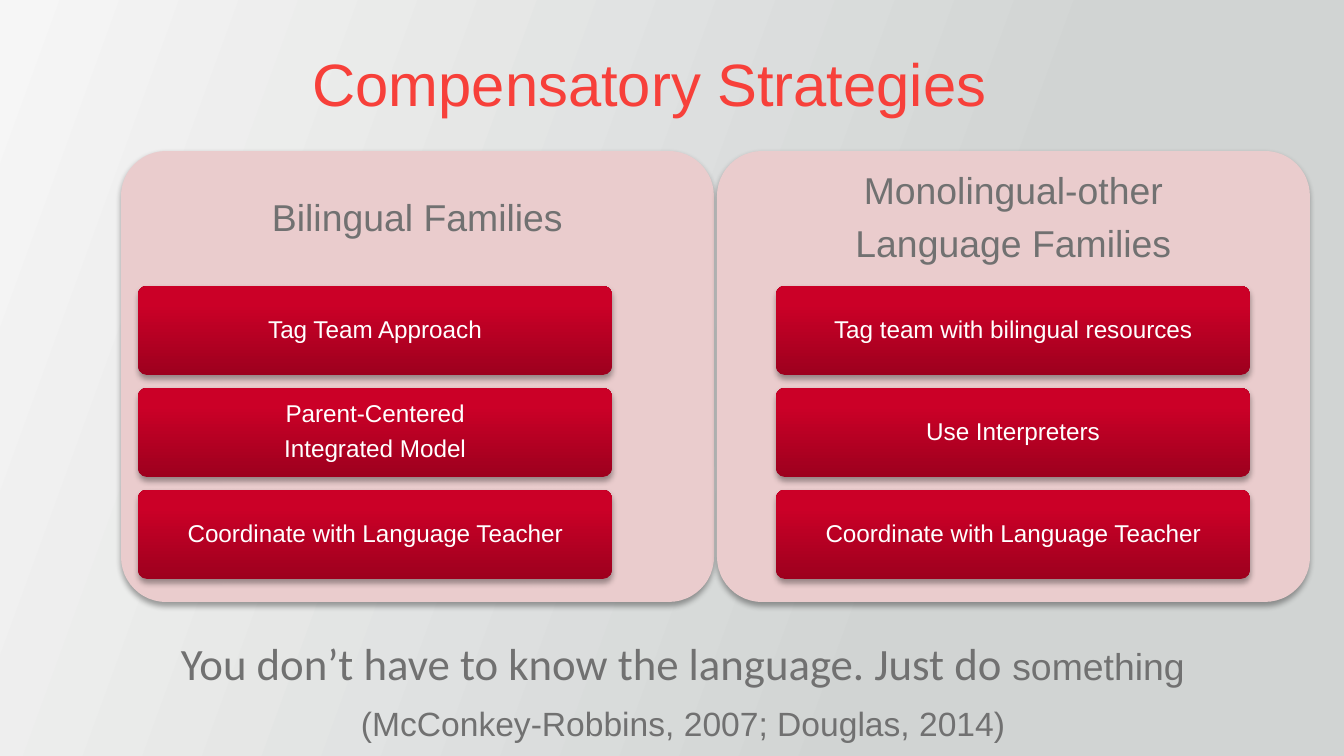
from lxml import etree
from pptx import Presentation
from pptx import util as u
from pptx.dml.color import RGBColor
from pptx.enum import shapes, text
from pptx.oxml.ns import qn

PX = 914400 / 134.4
GREY, RED, WHITE, PINK = "717171", "F7403A", "FFFFFF", "EACCCD"
BACKDROP = [(0, "F6F6F6"), (70, "D1D4D3")]
CRIMSON = [(0, "9D001E"), (80, "CB0027"), (100, "CC0028")]

CARD_TOP, CARD_W, CARD_H, HEADING_H = 151, 593, 451, 136
BUTTON_TOP, BUTTON_W, BUTTON_H, BUTTON_STEP = 286, 474, 89, 102

# Card left, button left, heading lines, strategies
FAMILIES = [
    (121, 138, ["Bilingual Families"],
     [["Tag Team Approach"],
      ["Parent-Centered", "Integrated Model"],
      ["Coordinate with Language Teacher"]]),
    (717, 776, ["Monolingual-other", "Language Families"],
     [["Tag team with bilingual resources"],
      ["Use Interpreters"],
      ["Coordinate with Language Teacher"]]),
]


def px(length):
    return u.Emu(round(length * PX))


def rgb(color):
    return RGBColor.from_string(color)


def add_xml(parent, tag, **attributes):
    return etree.SubElement(parent, qn(tag), {k: str(v) for k, v in attributes.items()})


def set_gradient(fill, owner, stops, angle):
    fill.gradient()
    gradient = owner.find(".//" + qn("a:gradFill"))
    for child in list(gradient):
        gradient.remove(child)
    stop_list = add_xml(gradient, "a:gsLst")
    for position, color in stops:
        stop = add_xml(stop_list, "a:gs", pos=position * 1000)
        add_xml(stop, "a:srgbClr", val=color)
    add_xml(gradient, "a:lin", ang=angle * 60000, scaled=0)


def add_shadow(shape):
    shape.shadow.inherit = False
    effects = shape._element.spPr.find(qn("a:effectLst"))
    shadow = add_xml(effects, "a:outerShdw", blurRad=u.Pt(3.1), dist=u.Pt(1.8),
                     dir=90 * 60000, rotWithShape=0)
    black = add_xml(shadow, "a:srgbClr", val="000000")
    add_xml(black, "a:alpha", val=35000)


def write(frame, lines, size=20, color=GREY, align=text.PP_ALIGN.CENTER,
          anchor=text.MSO_ANCHOR.MIDDLE, inset=(13, 7), wrap=True, stacked=False):
    """Each line is a list of (words, font, size) runs or a plain string."""
    frame.word_wrap = wrap
    frame.vertical_anchor = anchor
    frame.margin_left = frame.margin_right = px(inset[0])
    frame.margin_top = frame.margin_bottom = px(inset[1])
    for index, line in enumerate(lines):
        paragraph = frame.add_paragraph() if index else frame.paragraphs[0]
        paragraph.alignment = align
        if stacked:
            paragraph.line_spacing = 0.9
            after = add_xml(paragraph._p.get_or_add_pPr(), "a:spcAft")
            add_xml(after, "a:spcPct", val=35000)
        runs = [(line, "Arial", size)] if isinstance(line, str) else line
        for words, font, points in runs:
            run = paragraph.add_run()
            run.text = words
            run.font.name = font
            run.font.size = u.Pt(points)
            run.font.color.rgb = rgb(color)


def add_label(slide, x, y, w, h, lines, **style):
    label = slide.shapes.add_textbox(px(x), px(y), px(w), px(h))
    write(label.text_frame, lines, **style)
    return label


def add_panel(slide, x, y, w, h):
    panel = slide.shapes.add_shape(shapes.MSO_SHAPE.ROUNDED_RECTANGLE,
                                   px(x), px(y), px(w), px(h))
    panel.adjustments[0] = 0.1
    panel.line.fill.background()
    add_shadow(panel)
    return panel


def add_button(slide, x, y, lines):
    button = add_panel(slide, x, y, BUTTON_W, BUTTON_H)
    set_gradient(button.fill, button._element.spPr, CRIMSON, 270)
    write(button.text_frame, lines, size=13, color=WHITE, inset=(5, 4), stacked=True)


def add_family(slide, card_left, button_left, heading, strategies):
    card = add_panel(slide, card_left, CARD_TOP, CARD_W, CARD_H)
    card.fill.solid()
    card.fill.fore_color.rgb = rgb(PINK)
    add_label(slide, card_left, CARD_TOP, CARD_W, HEADING_H, heading,
              inset=(11, 11), stacked=True)
    for row, lines in enumerate(strategies):
        add_button(slide, button_left, BUTTON_TOP + row * BUTTON_STEP, lines)


def add_note(slide, x, y, w, h, line):
    note = add_label(slide, x, y, w, h, [line], align=text.PP_ALIGN.LEFT,
                     anchor=text.MSO_ANCHOR.TOP, wrap=False)
    note.text_frame.auto_size = text.MSO_AUTO_SIZE.SHAPE_TO_FIT_TEXT


def main():
    deck = Presentation()
    deck.slide_width, deck.slide_height = px(1344), px(756)
    slide = deck.slides.add_slide(deck.slide_layouts[6])
    set_gradient(slide.background.fill, slide._element, BACKDROP, 20)

    # Title
    add_label(slide, 0, 15, 1300, 110, ["Compensatory Strategies"],
              size=32, color=RED, anchor=text.MSO_ANCHOR.BOTTOM)

    # Two family cards
    for family in FAMILIES:
        add_family(slide, *family)

    # Closing message and citation
    add_note(slide, 168, 629, 1039, 67,
             [("You don’t have to know the language. Just do", "Calibri", 24),
              (" something", "Arial", 20)])
    add_note(slide, 348, 696, 677, 54,
             [("(McConkey-Robbins, 2007; Douglas, 2014)", "Arial", 18)])

    deck.save("out.pptx")


if __name__ == "__main__":
    main()
